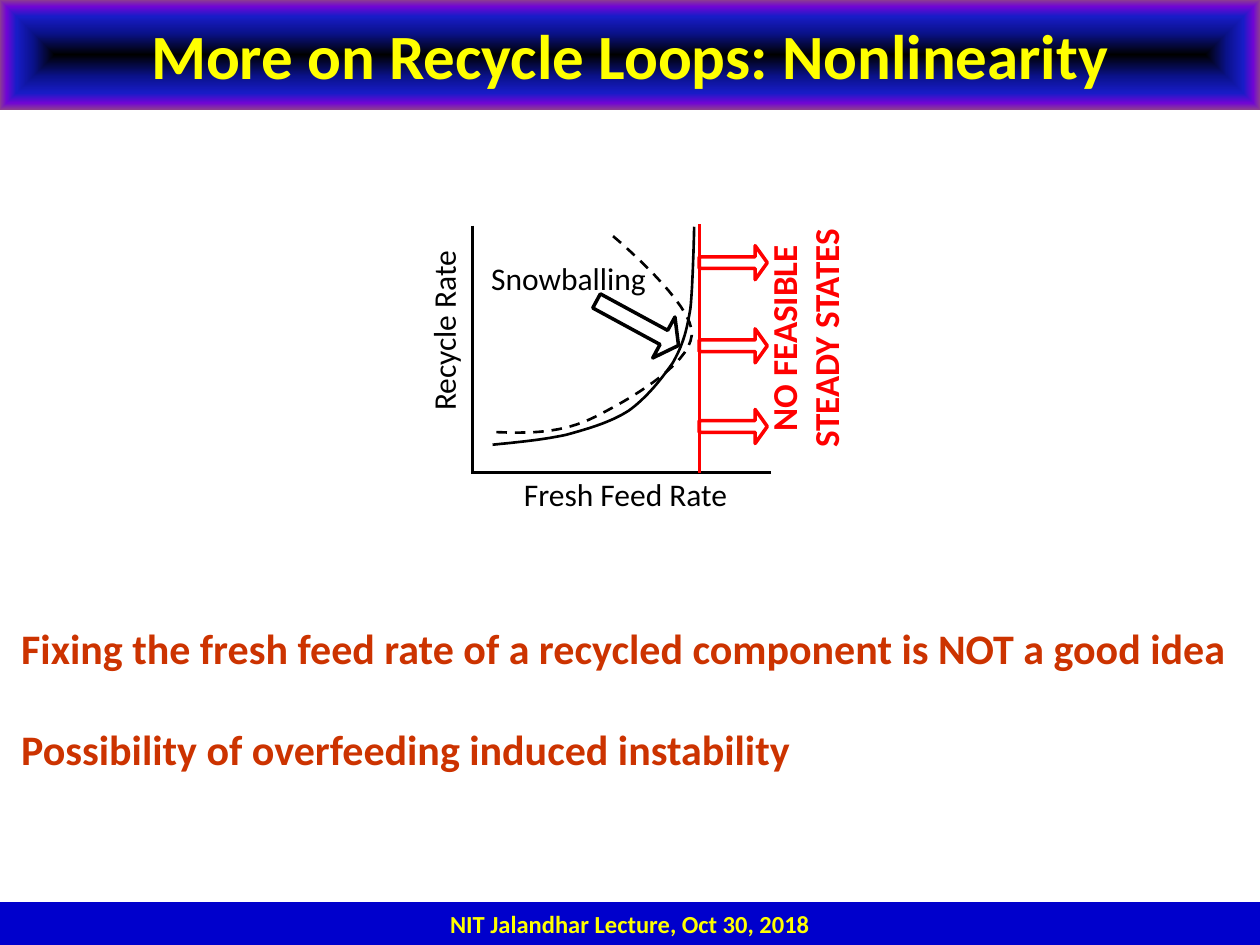
from dataclasses import dataclass

from lxml.etree import SubElement
from pptx import Presentation
from pptx.dml.color import RGBColor as Rgb
from pptx.enum.dml import MSO_LINE_DASH_STYLE as Dash
from pptx.enum.shapes import MSO_CONNECTOR as Link, MSO_SHAPE as Kind
from pptx.enum.text import MSO_ANCHOR as Anchor, MSO_AUTO_SIZE as Fit, PP_ALIGN as Align
from pptx.oxml import parse_xml
from pptx.oxml.ns import nsdecls, qn
from pptx.util import Inches, Pt


@dataclass(frozen=True)
class Theme:
    font: str = "Calibri"
    black: str = "000000"
    red: str = "FF0000"
    rust: str = "CC3300"
    blue: str = "0000CC"
    yellow: str = "FFFF00"
    title: int = 36
    body: int = 24
    alert: int = 20
    label: int = 18
    foot: int = 14
    thin: float = 1.5
    thick: float = 2
    glow: tuple = ((0, "000000"), (40, "0A128C"), (70, "181CC7"),
                   (88, "7005D4"), (100, "8C3D91"))


def trace(start, curves, steps=16):
    """Sample a chain of cubic Bezier curves into points."""
    points = [start]
    for b, c, d in curves:
        a = points[-1]
        for i in range(1, steps + 1):
            t = i / steps
            u = 1 - t
            points.append(tuple(
                u**3 * p + 3 * u * u * t * q + 3 * u * t * t * r + t**3 * s
                for p, q, r, s in zip(a, b, c, d)))
    return points


class Deck:
    def __init__(self, theme):
        self.theme = theme
        self.prs = Presentation()
        self.prs.slide_width, self.prs.slide_height = Inches(10), Inches(7.5)
        self.slide = self.prs.slides.add_slide(self.prs.slide_layouts[6])
        self.shapes = self.slide.shapes

    def set_text(self, shape, text, size, color, bold=False, align=Align.LEFT, gap=0):
        frame = shape.text_frame
        frame.text = text
        for i, para in enumerate(frame.paragraphs):
            para.alignment = align
            if i:
                para.space_before = Pt(gap)
            for run in para.runs:
                font = run.font
                font.name, font.size, font.bold = self.theme.font, Pt(size), bold
                font.color.rgb = Rgb.from_string(color)

    def label(self, box, text, size, color, wrap=False, upright=False, **style):
        shape = self.shapes.add_textbox(*map(Inches, box))
        self.set_text(shape, text, size, color, **style)
        frame = shape.text_frame
        frame.word_wrap, frame.auto_size = wrap, Fit.SHAPE_TO_FIT_TEXT
        if upright:
            shape.element.txBody.find(qn("a:bodyPr")).set("vert", "vert270")

    def band(self, top, height, text, size, fill=None):
        """Draw a full-width bar; without a fill it gets the theme glow."""
        shape = self.shapes.add_shape(Kind.RECTANGLE, 0, Inches(top),
                                      self.prs.slide_width, Inches(height))
        shape.shadow.inherit = False
        shape.line.fill.background()
        if fill:
            shape.fill.solid()
            shape.fill.fore_color.rgb = Rgb.from_string(fill)
        else:
            stops = "".join(f'<a:gs pos="{pos * 1000}"><a:srgbClr val="{color}"/></a:gs>'
                            for pos, color in self.theme.glow)
            glow = parse_xml(
                f'<a:gradFill {nsdecls("a")} rotWithShape="1"><a:gsLst>{stops}</a:gsLst>'
                '<a:path path="rect"><a:fillToRect l="50000" t="50000" r="50000" '
                'b="50000"/></a:path></a:gradFill>')
            shape.element.spPr.find(qn("a:prstGeom")).addnext(glow)
        self.set_text(shape, text, size, self.theme.yellow, True, Align.CENTER)
        shape.text_frame.vertical_anchor = Anchor.MIDDLE

    def stroke(self, shape, color, width):
        shape.line.color.rgb = Rgb.from_string(color)
        shape.line.width = Pt(width)

    def line(self, start, end, color):
        link = self.shapes.add_connector(Link.STRAIGHT, *map(Inches, start + end))
        self.stroke(link, color, self.theme.thin)
        SubElement(link.element.spPr, qn("a:effectLst"))

    def arrow(self, box, color, turn=0):
        shape = self.shapes.add_shape(Kind.RIGHT_ARROW, *map(Inches, box))
        shape.adjustments[0], shape.adjustments[1] = 0.343, 0.358
        shape.rotation = turn
        shape.shadow.inherit = False
        shape.fill.background()
        self.stroke(shape, color, self.theme.thick)

    def curve(self, start, curves, dash=None):
        points = [tuple(map(Inches, p)) for p in trace(start, curves)]
        pen = self.shapes.build_freeform(*points[0])
        pen.add_line_segments(points[1:], close=False)
        shape = pen.convert_to_shape()
        shape.shadow.inherit = False
        shape.fill.background()
        self.stroke(shape, self.theme.black, self.theme.thin)
        if dash:
            shape.line.dash_style = dash


def main():
    t = Theme()
    deck = Deck(t)
    deck.band(7.16, 0.34, "NIT Jalandhar Lecture, Oct 30, 2018", t.foot, t.blue)
    deck.band(0, 0.87, "More on Recycle Loops: Nonlinearity", t.title)

    # Axes
    deck.line((3.75, 1.79), (3.75, 3.76), t.black)
    deck.line((6.12, 3.75), (3.76, 3.75), t.black)
    deck.label((4.06, 3.72, 1.84, 0.4), "Fresh Feed Rate", t.label, t.black)
    deck.label((3.32, 1.97, 0.5, 1.39), "Recycle Rate", t.label, t.black, upright=True)

    # Curve that turns back
    deck.curve((3.94, 3.43), [
        ((4.2, 3.44), (4.46, 3.44), (4.72, 3.31)),
        ((4.98, 3.18), (5.47, 2.9), (5.49, 2.66)),
        ((5.52, 2.42), (4.86, 1.87), (4.86, 1.87)),
    ], Dash.DASH)

    # Feasibility limit
    deck.line((5.55, 1.78), (5.55, 3.75), t.red)
    for top in (1.95, 2.61, 3.25):
        deck.arrow((5.55, top, 0.54, 0.27), t.red)
    deck.label((6, 1.45, 0.88, 2.47), "NO FEASIBLE STEADY STATES", t.alert, t.red,
               wrap=True, upright=True, bold=True, align=Align.CENTER)

    # Snowballing curve
    deck.curve((3.91, 3.53), [
        ((4.11, 3.51), (4.32, 3.49), (4.5, 3.45)),
        ((4.68, 3.4), (4.85, 3.35), (4.99, 3.26)),
        ((5.13, 3.16), (5.25, 3.01), (5.34, 2.88)),
        ((5.42, 2.74), (5.45, 2.63), (5.48, 2.45)),
        ((5.5, 2.27), (5.51, 1.8), (5.51, 1.8)),
    ])
    deck.arrow((4.69, 2.38, 0.74, 0.37), t.black, 28.5)
    deck.label((3.8, 2.01, 1.44, 0.4), "Snowballing", t.label, t.black)

    deck.label((0.07, 4.89, 9.85, 1.31),
               "Fixing the fresh feed rate of a recycled component is NOT a good idea\n"
               "Possibility of overfeeding induced instability",
               t.body, t.rust, bold=True, gap=29)
    deck.prs.save("out.pptx")


if __name__ == "__main__":
    main()
